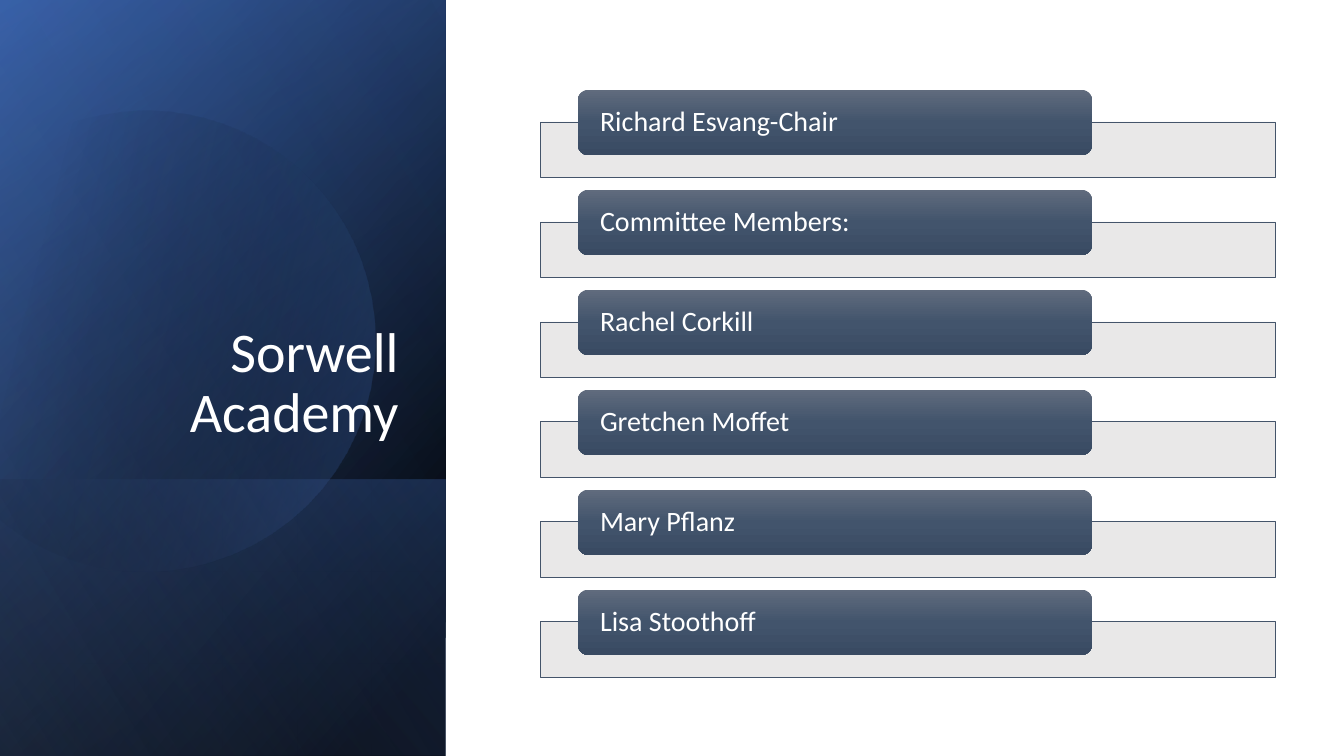
import math
import pptx
import pptx.util
import pptx.dml.color
import pptx.enum.shapes
import pptx.enum.text
import pptx.oxml
import pptx.oxml.ns
from lxml import etree

Inches = pptx.util.Inches
SHAPE = pptx.enum.shapes.MSO_SHAPE
ANCHOR = pptx.enum.text.MSO_ANCHOR
ALIGN = pptx.enum.text.PP_ALIGN
qn = pptx.oxml.ns.qn

COLORS = {
    "black": "000000", "white": "FFFFFF", "navy": "2F5597", "blue": "4472C4",
    "pale_blue": "8FAADC", "bar": "E7E6E6", "slate": "44546A",
    "pill_top": "606B7D", "pill_mid": "42546C", "pill_end": "394A62",
}
FONT = "Calibri"
MEMBERS = ["Richard Esvang-Chair", "Committee Members:", "Rachel Corkill",
           "Gretchen Moffet", "Mary Pflanz", "Lisa Stoothoff"]
DISC_START = (1.49, 1.1)
DISC_CURVES = [
    [(2.46, 1.12), (3.35, 1.77), (3.63, 2.75)],
    [(3.98, 3.97), (3.28, 5.23), (2.07, 5.58)],
    [(1.31, 5.8), (0.53, 5.61), (-0.03, 5.14)],
    [(-0.15, 5.03)],
    [(-0.15, 1.75)],
    [(0, 1.61)],
    [(0.23, 1.42), (0.5, 1.28), (0.8, 1.19)],
    [(1.03, 1.13), (1.26, 1.1), (1.49, 1.1)],
]
DISC_CENTER = (1.59, 3.35)
DISC_TILT = 16.1


def rgb(name):
    return pptx.dml.color.RGBColor.from_string(COLORS[name])


def set_alpha(color, percent):
    etree.SubElement(color, qn("a:alpha")).set("val", str(percent * 1000))


def fill_gradient(sp, stops, angle):
    sp.shadow.inherit = False
    sp.line.fill.background()
    sp.fill.gradient()
    grad = sp._element.spPr.find(qn("a:gradFill"))
    stop_list = grad.find(qn("a:gsLst"))
    for gs in list(stop_list):
        stop_list.remove(gs)
    for position, name, alpha in stops:
        gs = etree.SubElement(stop_list, qn("a:gs"))
        gs.set("pos", str(position * 1000))
        color = etree.SubElement(gs, qn("a:srgbClr"))
        color.set("val", COLORS[name])
        if alpha < 100:
            set_alpha(color, alpha)
    lin = grad.find(qn("a:lin"))
    lin.set("ang", str(angle * 60000))
    lin.set("scaled", "0")


def write_text(tf, text, size, anchor, align):
    tf.word_wrap = True
    tf.vertical_anchor = anchor
    p = tf.paragraphs[0]
    p.text = text
    p.alignment = align
    p.line_spacing = 0.9
    p.font.name = FONT
    p.font.size = pptx.util.Pt(size)
    p.font.color.rgb = rgb("white")


def add_shade(slide, left, top, width, height, stops, angle):
    cx, cy = left + width / 2, top + height / 2
    sp = slide.shapes.add_shape(SHAPE.RECTANGLE, Inches(cx - height / 2), Inches(cy - width / 2),
                                Inches(height), Inches(width))
    sp.rotation = 90
    sp._element.spPr.find(qn("a:xfrm")).set("flipH", "1")
    fill_gradient(sp, stops, angle)


def disc_points(steps=16):
    points = [DISC_START]
    for curve in DISC_CURVES:
        if len(curve) == 1:
            points += curve
            continue
        a, (b, c, d) = points[-1], curve
        for i in range(1, steps + 1):
            t = i / steps
            u = 1 - t
            points.append(tuple(u**3 * a[k] + 3 * u * u * t * b[k] + 3 * u * t * t * c[k] + t**3 * d[k]
                                for k in (0, 1)))
    return points


def add_disc(slide, left, top):
    cx, cy = DISC_CENTER
    cos, sin = math.cos(math.radians(DISC_TILT)), math.sin(math.radians(DISC_TILT))
    outline = [(Inches(left + cx + (x - cx) * cos - (y - cy) * sin),
                Inches(top + cy + (x - cx) * sin + (y - cy) * cos)) for x, y in disc_points()]
    builder = slide.shapes.build_freeform(*outline[0])
    builder.add_line_segments(outline[1:], close=True)
    sp = builder.convert_to_shape()
    sp.rotation = 360 - DISC_TILT
    fill_gradient(sp, [(29, "black", 0), (100, "blue", 43)], 30)


def add_title_panel(slide, left, top, width, height):
    box = (left, top, width, height)
    foot = 2.74
    add_shade(slide, *box, [(8, "black", 100), (100, "navy", 100)], 50)
    add_shade(slide, *box, [(0, "black", 0), (99, "blue", 46)], 30)
    add_shade(slide, left, top + height - foot, width, foot,
              [(2, "blue", 29), (100, "black", 30)], 130)
    add_disc(slide, left, top)
    add_shade(slide, *box, [(0, "black", 0), (99, "pale_blue", 11)], 120)
    title = slide.shapes.add_textbox(Inches(left + 0.64), Inches(top + 1.84),
                                     Inches(3.41), Inches(2.62))
    write_text(title.text_frame, "Sorwell Academy", 40, ANCHOR.BOTTOM, ALIGN.RIGHT)


def add_member(slide, left, top, width, name):
    bar = slide.shapes.add_shape(SHAPE.RECTANGLE, Inches(left), Inches(top + 0.32),
                                 Inches(width), Inches(0.55))
    bar.shadow.inherit = False
    bar.fill.solid()
    bar.fill.fore_color.rgb = rgb("bar")
    set_alpha(bar._element.spPr.find(qn("a:solidFill"))[0], 90)
    bar.line.color.rgb = rgb("slate")
    bar.line.width = pptx.util.Pt(0.5)

    pill = slide.shapes.add_shape(SHAPE.ROUNDED_RECTANGLE, Inches(left + 0.37), Inches(top),
                                  Inches(width * 0.7), Inches(0.65))
    fill_gradient(pill, [(0, "pill_top", 100), (50, "pill_mid", 100), (100, "pill_end", 100)], 90)
    tf = pill.text_frame
    tf.margin_left = tf.margin_right = Inches(0.19)
    tf.margin_top = tf.margin_bottom = 0
    write_text(tf, name, 20, ANCHOR.MIDDLE, ALIGN.LEFT)


def add_member_list(slide, left, top, width, height):
    pitch = height / len(MEMBERS)
    for i, name in enumerate(MEMBERS):
        add_member(slide, left, top + i * pitch, width, name)


def main():
    prs = pptx.Presentation()
    prs.slide_width, prs.slide_height = Inches(13.33), Inches(7.5)
    slide = prs.slides.add_slide(prs.slide_layouts[6])
    add_title_panel(slide, 0, 0, 4.42, 7.5)
    add_member_list(slide, 5.36, 0.89, 7.29, 5.95)
    prs.save("out.pptx")


if __name__ == "__main__":
    main()
